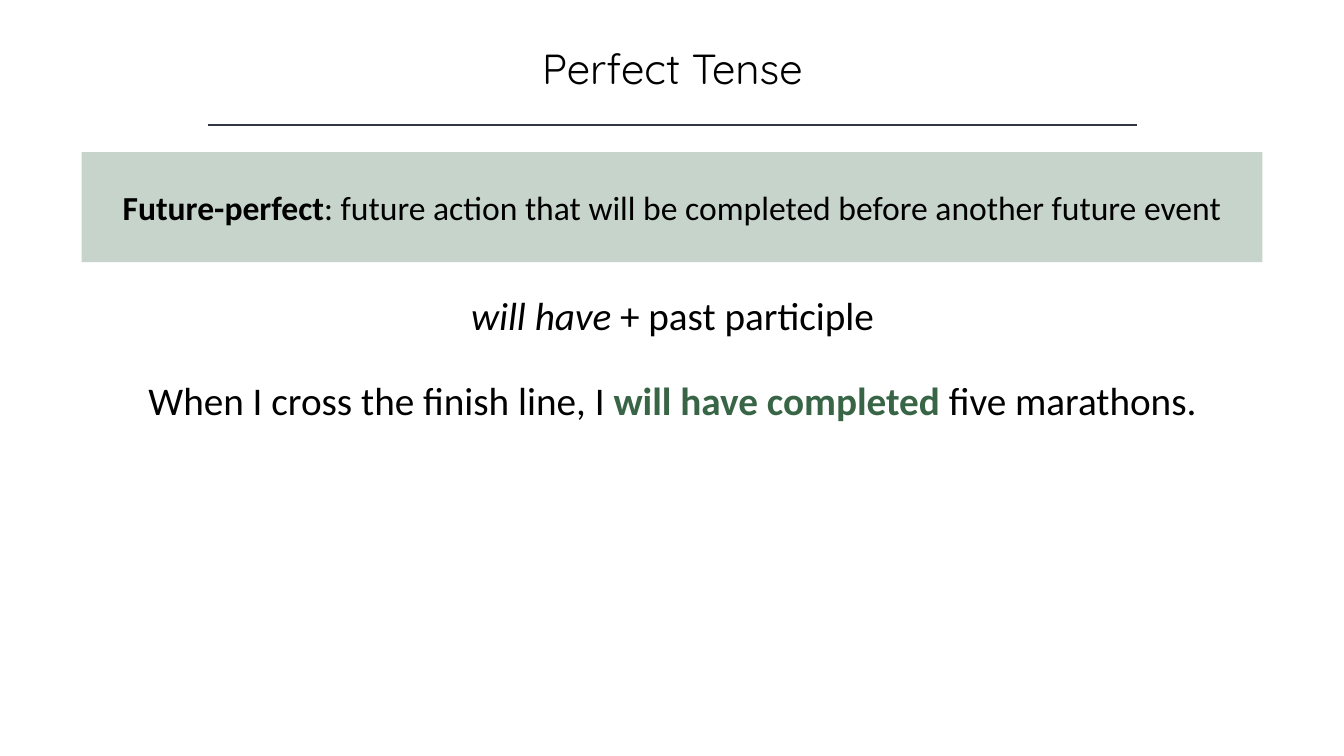
from dataclasses import dataclass

from lxml import etree
from pptx import Presentation
from pptx import util as u
from pptx.dml.color import RGBColor
from pptx.enum import shapes, text
from pptx.oxml import ns


@dataclass(frozen=True)
class Theme:
    ink: str = "000000"
    rule: str = "323542"
    band: str = "C7D4CB"
    accent: str = "386546"
    title_font: str = "Quicksand"
    body_font: str = "Calibri"
    title_size: int = 30
    definition_size: int = 24
    example_size: int = 28


THEME = Theme()


def write_runs(frame, pieces, size, font=THEME.body_font):
    """Write one centred paragraph from (wording, style) pairs."""
    paragraph = frame.paragraphs[0]
    paragraph.alignment = text.PP_ALIGN.CENTER
    for wording, style in pieces:
        run = paragraph.add_run()
        run.text = wording
        run.font.name = font
        run.font.size = u.Pt(size)
        run.font.bold = style in ("bold", "accent")
        run.font.italic = style == "italic"
        color = THEME.accent if style == "accent" else THEME.ink
        run.font.color.rgb = RGBColor.from_string(color)


def add_text(slide, box, pieces, size, font=THEME.body_font, wrap=False):
    frame = slide.shapes.add_textbox(*map(u.Inches, box)).text_frame
    frame.word_wrap = wrap
    frame.auto_size = text.MSO_AUTO_SIZE.SHAPE_TO_FIT_TEXT
    write_runs(frame, pieces, size, font)


def add_heading(slide, left, top, width, title):
    """Place the title with a thin rule centred below it."""
    add_text(slide, (left, top, width, 0.61), [(title, "plain")],
             THEME.title_size, THEME.title_font, wrap=True)
    inset, rule_top = 0.39, top + 0.87
    rule = slide.shapes.add_connector(
        shapes.MSO_CONNECTOR.STRAIGHT,
        u.Inches(left + inset), u.Inches(rule_top),
        u.Inches(left + width - inset), u.Inches(rule_top))
    rule.line.color.rgb = RGBColor.from_string(THEME.rule)
    rule.line.width = u.Pt(1)
    etree.SubElement(rule._element.spPr, ns.qn("a:effectLst"))


def add_definition(slide, box, pieces):
    band = slide.shapes.add_shape(
        shapes.MSO_SHAPE.RECTANGLE, *map(u.Inches, box))
    band.shadow.inherit = False
    band.fill.solid()
    band.fill.fore_color.rgb = RGBColor.from_string(THEME.band)
    band.line.fill.background()
    band.text_frame.word_wrap = True
    band.text_frame.vertical_anchor = text.MSO_ANCHOR.MIDDLE
    write_runs(band.text_frame, pieces, THEME.definition_size)


def add_examples(slide, center, top, examples):
    """Stack (width, pieces) lines at an equal pitch around a centre."""
    pitch = 0.84
    for row, (width, pieces) in enumerate(examples):
        box = (center - width / 2, top + row * pitch, width, 0.57)
        add_text(slide, box, pieces, THEME.example_size)


def main():
    deck = Presentation()
    deck.slide_width, deck.slide_height = u.Inches(13.33), u.Inches(7.5)
    slide = deck.slides.add_slide(deck.slide_layouts[6])

    add_heading(slide, 1.67, 0.37, 10, "Perfect Tense")
    add_definition(slide, (0.81, 1.51, 11.71, 1.09), [
        ("Future-perfect", "bold"),
        (": future action that will be completed before another future event",
         "plain"),
    ])
    add_examples(slide, 6.67, 2.84, [
        (4.31, [("will have", "italic"), (" + past participle", "plain")]),
        (10.72, [("When I cross the finish line, I ", "plain"),
                 ("will have completed", "accent"),
                 (" five marathons.", "plain")]),
    ])
    deck.save("out.pptx")


if __name__ == "__main__":
    main()
